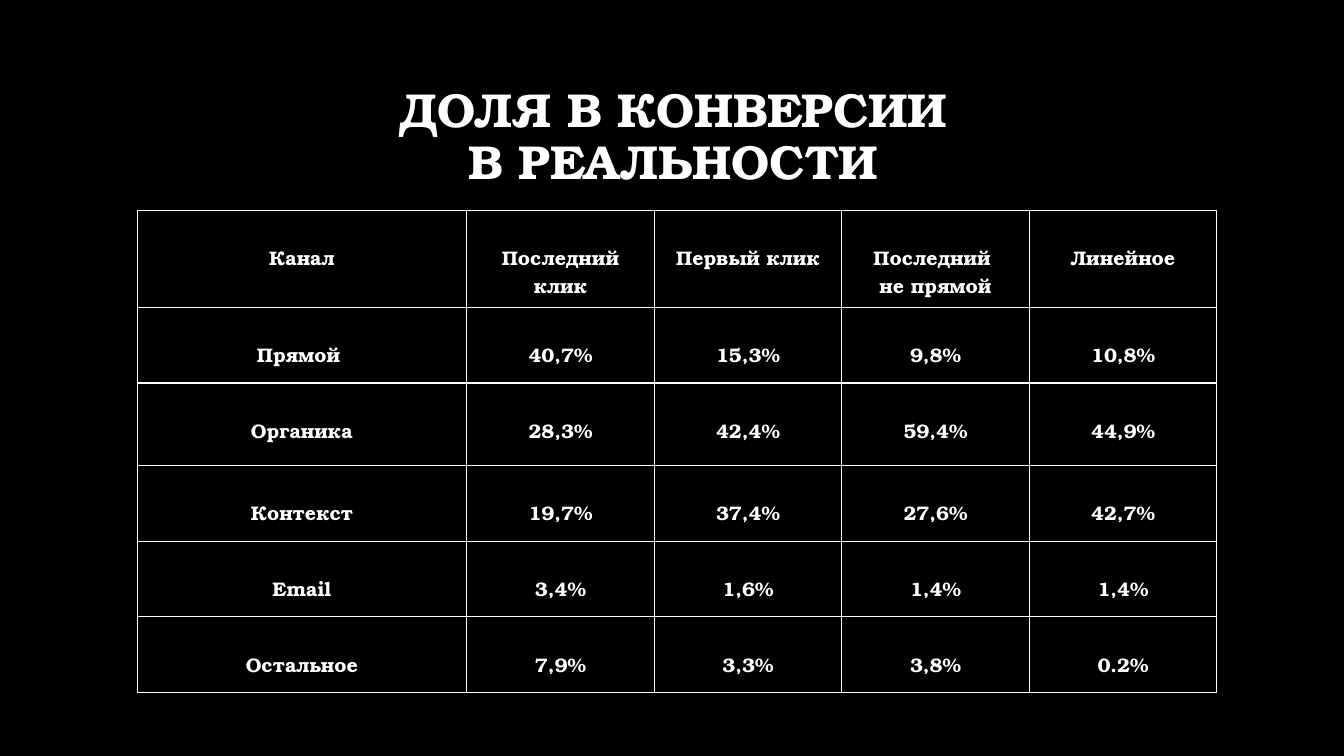
import pptx
import pptx.util
import pptx.dml.color
import pptx.enum.text
import pptx.oxml
import pptx.oxml.ns
from lxml import etree

Inches, Pt = pptx.util.Inches, pptx.util.Pt
RGBColor = pptx.dml.color.RGBColor
PP_ALIGN = pptx.enum.text.PP_ALIGN
MSO_ANCHOR = pptx.enum.text.MSO_ANCHOR

# Content
TITLE = ["ДОЛЯ В КОНВЕРСИИ", "В РЕАЛЬНОСТИ"]
ROWS = [
    ["Канал", "Последний клик", "Первый клик", "Последний \nне прямой", "Линейное"],
    ["Прямой ", "40,7%", "15,3%", "9,8%", "10,8%"],
    ["Органика", "28,3%", "42,4%", "59,4%", "44,9%"],
    ["Контекст", "19,7%", "37,4%", "27,6%", "42,7%"],
    ["Email", "3,4%", "1,6%", "1,4%", "1,4%"],
    ["Остальное", "7,9%", "3,3%", "3,8%", "0.2%"],
]

# Style and measures
BLACK = RGBColor(0x00, 0x00, 0x00)
WHITE = RGBColor(0xFF, 0xFF, 0xFF)
FONT = "TeX Gyre Bonum"
LEFT = 1.36
COLUMN_WIDTHS = [3.27] + [1.86] * 4
ROW_HEIGHTS = [0.96, 0.75, 0.82, 0.75, 0.75, 0.75]


def write_lines(paragraph, lines, size, line_spacing):
    paragraph.alignment = PP_ALIGN.CENTER
    paragraph.line_spacing = line_spacing
    for index, line in enumerate(lines):
        if index:
            paragraph.add_line_break()
        run = paragraph.add_run()
        run.text = line
        run.font.name = FONT
        run.font.size = Pt(size)
        run.font.bold = True
        run.font.color.rgb = WHITE


def add_borders(cell):
    properties = cell._tc.get_or_add_tcPr()
    for position, side in enumerate(("lnL", "lnR", "lnT", "lnB")):
        border = etree.Element(pptx.oxml.ns.qn("a:" + side), w=str(Pt(1)))
        fill = etree.SubElement(border, pptx.oxml.ns.qn("a:solidFill"))
        etree.SubElement(fill, pptx.oxml.ns.qn("a:srgbClr"), val=str(WHITE))
        properties.insert(position, border)


# Slide
presentation = pptx.Presentation()
presentation.slide_width = Inches(13.33)
presentation.slide_height = Inches(7.5)
slide = presentation.slides.add_slide(presentation.slide_layouts[6])
slide.background.fill.solid()
slide.background.fill.fore_color.rgb = BLACK

# Title
title = slide.shapes.add_textbox(Inches(LEFT), Inches(0.5), Inches(10.64), Inches(1.43))
title.text_frame.word_wrap = True
title.text_frame.vertical_anchor = MSO_ANCHOR.BOTTOM
write_lines(title.text_frame.paragraphs[0], TITLE, 34, 0.9)

# Table
table = slide.shapes.add_table(
    len(ROWS), len(COLUMN_WIDTHS), Inches(LEFT), Inches(2.09),
    Inches(sum(COLUMN_WIDTHS)), Inches(sum(ROW_HEIGHTS))).table
for column, width in zip(table.columns, COLUMN_WIDTHS):
    column.width = Inches(width)
for row, height, texts in zip(table.rows, ROW_HEIGHTS, ROWS):
    row.height = Inches(height)
    for cell, text in zip(row.cells, texts):
        cell.fill.solid()
        cell.fill.fore_color.rgb = BLACK
        cell.margin_top = Inches(0.33)
        write_lines(cell.text_frame.paragraphs[0], text.split("\n"), 14, Pt(20))
        add_borders(cell)

presentation.save("out.pptx")
